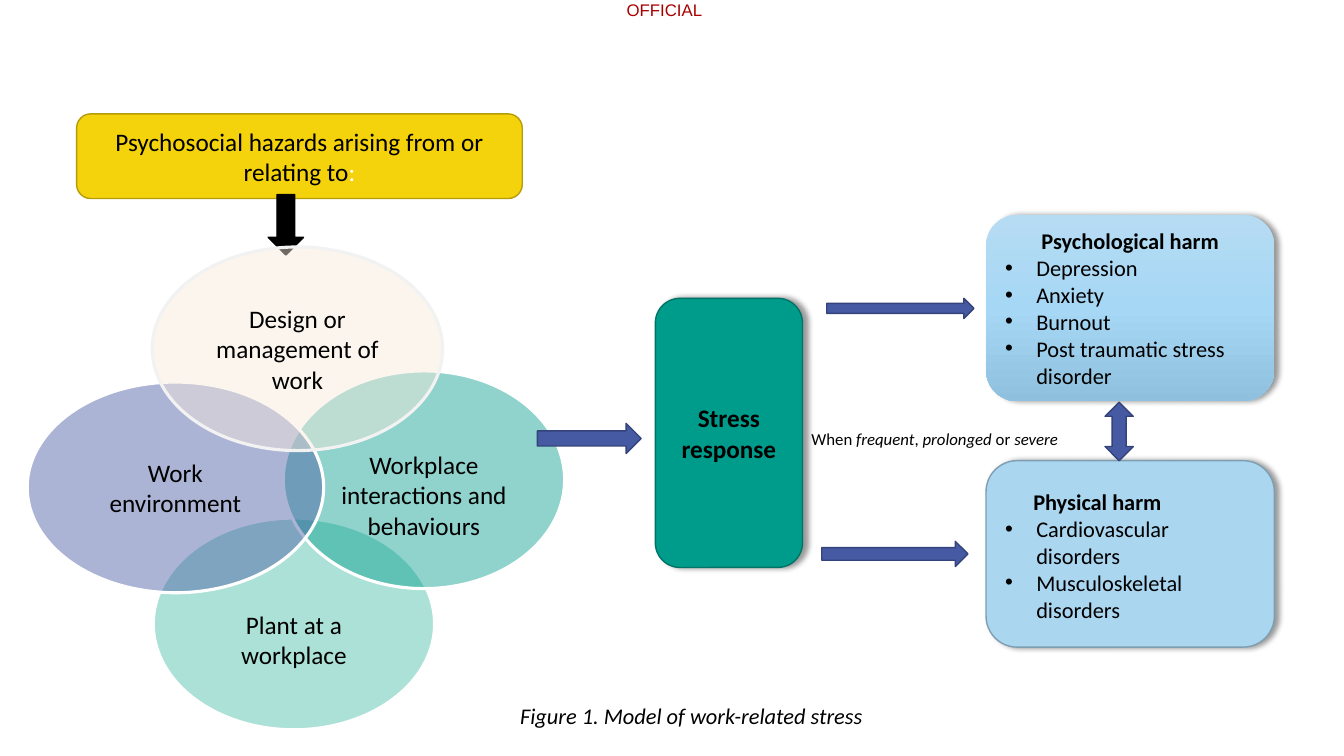
from copy import deepcopy

from lxml.etree import SubElement
from pptx import Presentation
from pptx.dml.color import RGBColor
from pptx.enum.shapes import MSO_SHAPE
from pptx.enum.text import MSO_ANCHOR, PP_ALIGN
from pptx.oxml.ns import qn
from pptx.util import Pt

PX = 9144  # 100 px to the inch
COLORS = {
    "black": "000000", "white": "FFFFFF", "red": "A80000",
    "yellow": "F4D30C", "yellow edge": "B59C09",
    "mint": "48BDA8", "teal": "009C8B", "teal edge": "007367",
    "indigo": "465AA3", "indigo edge": "344379",
    "cream": "F7E9DB", "pale grey": "F2F2F2",
    "sky": "AAD6F0", "sky edge": "7E9EB2",
    "sky top": "B6DCF3", "sky middle": "A6D7F4", "sky bottom": "8FC0DD",
}

deck = Presentation()
deck.slide_width, deck.slide_height = 1333 * PX, 750 * PX
page = deck.slides.add_slide(deck.slide_layouts[6])


def add_block(kind, place, fill, line=None, weight=1, opacity=None, shadow=False):
    """Add a filled preset shape; opacity is in percent."""
    block = page.shapes.add_shape(kind, *[n * PX for n in place])
    block.shadow.inherit = False
    block.fill.solid()
    block.fill.fore_color.rgb = RGBColor.from_string(COLORS[fill])
    if line:
        block.line.color.rgb = RGBColor.from_string(COLORS[line])
        block.line.width = Pt(weight)
    else:
        block.line.fill.background()
    properties = block._element.spPr
    if opacity:
        color = properties.find(qn("a:solidFill"))[0]
        SubElement(color, qn("a:alpha"), val=str(opacity * 1000))
    if shadow:
        cast = SubElement(properties.find(qn("a:effectLst")), qn("a:outerShdw"),
                          blurRad=str(Pt(4)), dist=str(Pt(3)), dir="0",
                          algn="l", rotWithShape="0")
        color = SubElement(cast, qn("a:srgbClr"), val=COLORS["black"])
        SubElement(color, qn("a:alpha"), val="40000")
    block.text_frame.word_wrap = True
    block.text_frame.vertical_anchor = MSO_ANCHOR.MIDDLE
    return block


def add_text(para, text, size, color="black", bold=False, italic=False,
             align=PP_ALIGN.CENTER, face="Calibri"):
    para.alignment = align
    span = para.add_run()
    span.text = text
    span.font.name, span.font.size = face, Pt(size)
    span.font.bold, span.font.italic = bold, italic
    span.font.color.rgb = RGBColor.from_string(COLORS[color])


# Page marking
marking = page.shapes.add_textbox(619 * PX, 0, 80 * PX, 20 * PX).text_frame
marking.margin_left = marking.margin_right = marking.margin_top = marking.margin_bottom = 0
add_text(marking.paragraphs[0], "OFFICIAL", 12, "red", face="Arial")

# Hazards: heading, arrow and overlapping ellipses, from back to front
hazards = [
    ("Plant at a workplace", (152, 514, 279, 210), "mint", "white", 45, 35),
    ("Workplace interactions and behaviours", (281, 368, 279, 216), "teal", "white", 44, 35),
    ("Work environment", (27, 379, 294, 209), "indigo", "white", 45, 5),
    ("Design or management of work", (151, 245, 288, 202), "cream", "pale grey", 45, 5),
]
for label, place, fill, line, opacity, top_inset in hazards:
    if fill == "cream":  # the heading and its arrow lie under the top ellipse
        heading = add_block(MSO_SHAPE.ROUNDED_RECTANGLE, (76, 113, 442, 84),
                            "yellow", "yellow edge")
        heading_para = heading.text_frame.paragraphs[0]
        add_text(heading_para, "Psychosocial hazards arising from or relating to", 18)
        add_text(heading_para, ":", 18, "white")
        add_block(MSO_SHAPE.DOWN_ARROW, (266, 193, 35, 60), "black", "black")
    ellipse = add_block(MSO_SHAPE.OVAL, place, fill, line, 2.25, opacity)
    ellipse.text_frame.margin_top = top_inset * PX
    add_text(ellipse.text_frame.paragraphs[0], label, 18)

# Stress response
stress = add_block(MSO_SHAPE.ROUNDED_RECTANGLE, (650, 296, 146, 267),
                   "teal", "teal edge", shadow=True)
add_text(stress.text_frame.paragraphs[0], "Stress response", 18, bold=True)

# Harms
harms = [
    ("Psychological harm", 213, None, PP_ALIGN.CENTER, 0, 5,
     ["Depression", "Anxiety", "Burnout", "Post traumatic stress disorder"]),
    ("Physical harm", 457, "sky edge", PP_ALIGN.LEFT, 28, 8,
     ["Cardiovascular disorders", "Musculoskeletal disorders"]),
]
harm_boxes = []
for title, top, line, align, title_indent, top_inset, effects in harms:
    box = add_block(MSO_SHAPE.ROUNDED_RECTANGLE, (978, top, 286, 185),
                    "sky", line, shadow=True)
    harm_boxes.append(box)
    frame = box.text_frame
    frame.margin_top = top_inset * PX
    para = frame.paragraphs[0]
    para._p.get_or_add_pPr().set("marL", str(title_indent * PX))
    add_text(para, title, 16, bold=True, align=align)
    for effect in effects:
        para = frame.add_paragraph()
        bullet = para._p.get_or_add_pPr()
        bullet.set("marL", str(31 * PX))
        bullet.set("indent", str(-31 * PX))
        SubElement(bullet, qn("a:buFont"), typeface="Arial")
        SubElement(bullet, qn("a:buChar"), char="•")
        add_text(para, effect, 16, align=PP_ALIGN.LEFT)

# Three-stop gradient on the psychological harm box
gradient = harm_boxes[0].fill
gradient.gradient()
gradient.gradient_angle = 270
stop_list = harm_boxes[0]._element.spPr.find(qn("a:gradFill")).find(qn("a:gsLst"))
stop_list.insert(1, deepcopy(stop_list[0]))
for stop, position, name in zip(gradient.gradient_stops, (0, 0.5, 1),
                                ("sky top", "sky middle", "sky bottom")):
    stop.position = position
    stop.color.rgb = RGBColor.from_string(COLORS[name])

# Block arrows between the stages
for kind, place in [
    (MSO_SHAPE.RIGHT_ARROW, (533, 420, 103, 30)),
    (MSO_SHAPE.RIGHT_ARROW, (820, 296, 146, 20)),
    (MSO_SHAPE.RIGHT_ARROW, (815, 537, 145, 25)),
    (MSO_SHAPE.UP_DOWN_ARROW, (1096, 399, 28, 58)),
]:
    add_block(kind, place, "indigo", "indigo edge")

# Condition and caption
condition = [("When ", False), ("frequent", True), (", ", False),
             ("prolonged", True), (" or ", False), ("severe", True)]
caption = [("Figure 1. Model of work-related stress", True)]
for place, size, spans in [((795, 420, 286, 30), 12, condition),
                           ((506, 692, 432, 37), 16, caption)]:
    note = page.shapes.add_textbox(*[n * PX for n in place]).text_frame
    note.word_wrap = True
    for text, italic in spans:
        add_text(note.paragraphs[0], text, size, italic=italic, align=PP_ALIGN.LEFT)

deck.save("out.pptx")
